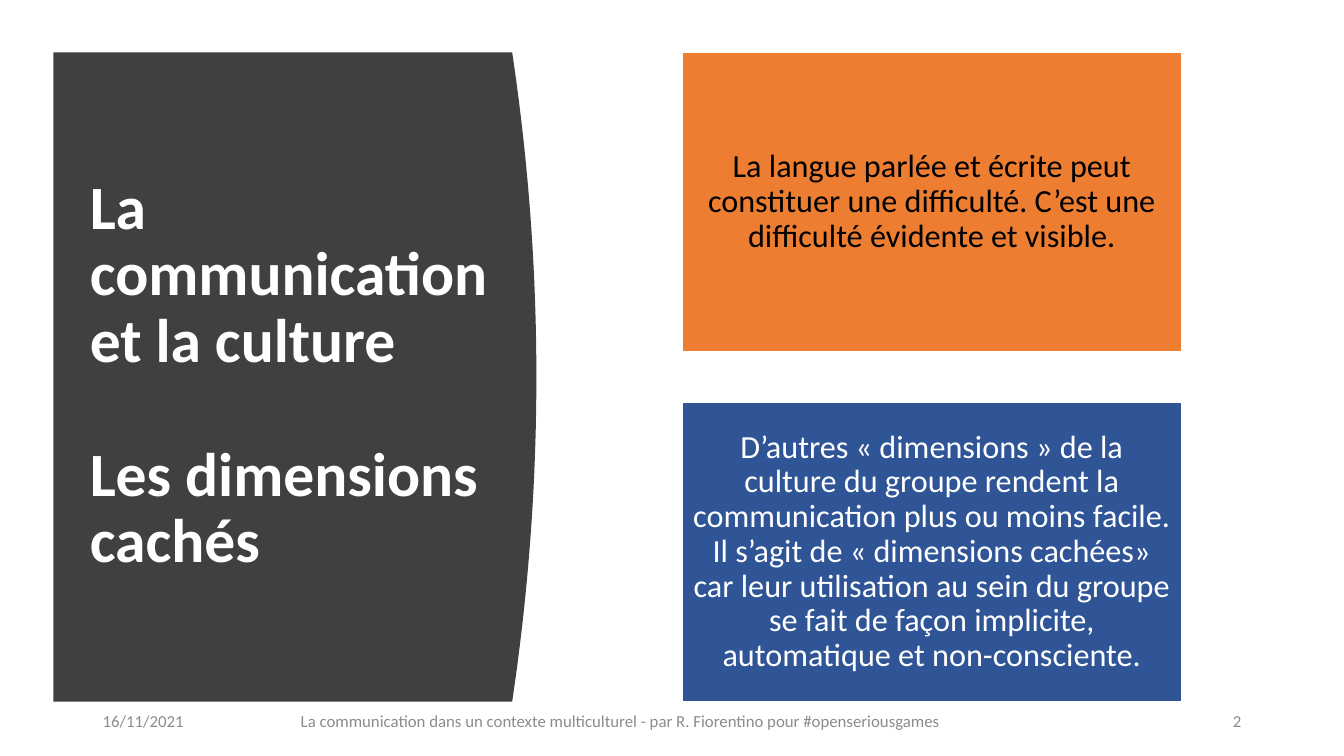
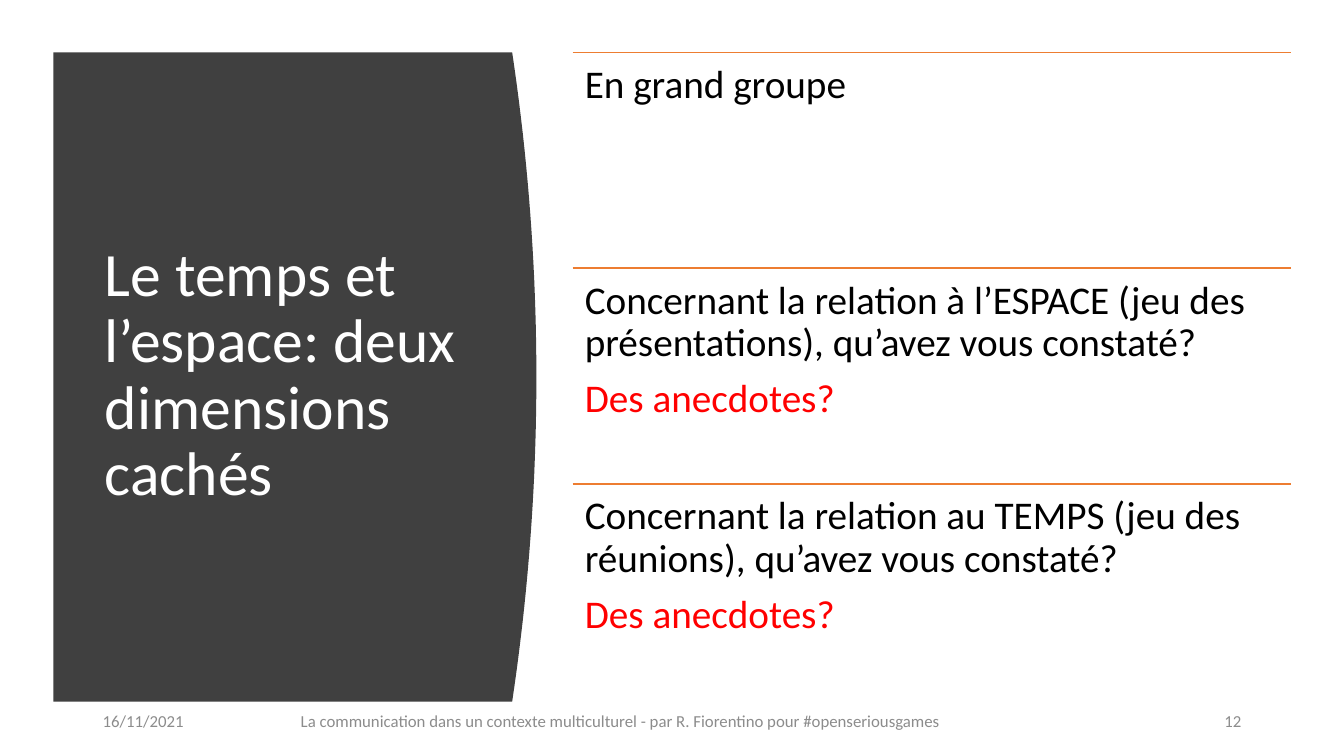
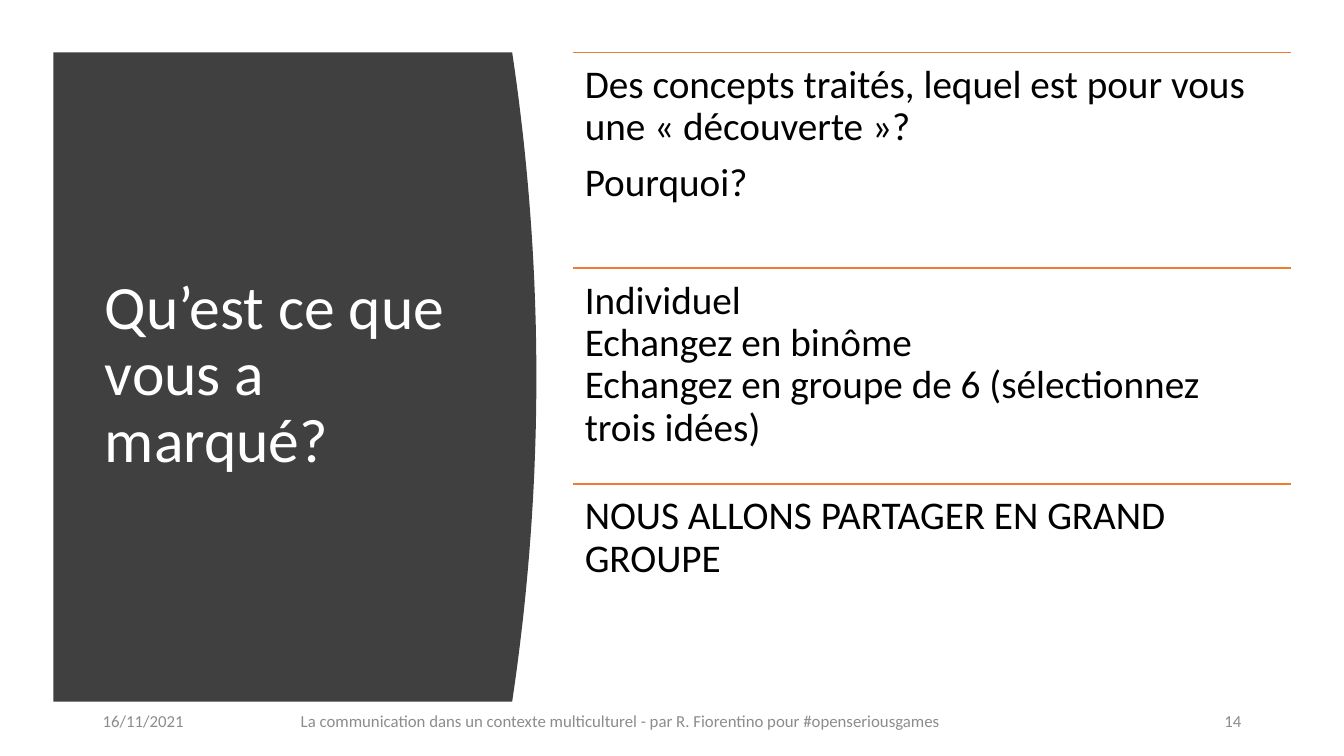
import pptx
import pptx.dml.color
import pptx.enum.shapes
import pptx.enum.text
import pptx.oxml.ns
import pptx.util
from lxml import etree
from pptx.util import Inches

FONT = "Calibri"
DARK, ORANGE, BLUE = "404040", "ED7D31", "2F5597"
WHITE, BLACK, RED, GREY = "FFFFFF", "000000", "FF0000", "8C8C8C"
DATE = "16/11/2021"
CREDIT = "La communication dans un contexte multiculturel - par R. Fiorentino pour #openseriousgames"
TOP, HEIGHT = 0.52, 6.44
PANEL = (0.53, TOP, 4.79, HEIGHT)
CARDS = (6.77, TOP, 4.95, HEIGHT)
ROWS = (5.68, TOP, 7.12, 6.42)
LEFT = pptx.enum.text.PP_ALIGN.LEFT
CENTER = pptx.enum.text.PP_ALIGN.CENTER
RIGHT = pptx.enum.text.PP_ALIGN.RIGHT
ANCHOR_TOP = pptx.enum.text.MSO_ANCHOR.TOP
ANCHOR_MIDDLE = pptx.enum.text.MSO_ANCHOR.MIDDLE


def color(value):
    return pptx.dml.color.RGBColor.from_string(value)


def paint(shape, fill, line=None):
    shape.shadow.inherit = False
    shape.fill.solid()
    shape.fill.fore_color.rgb = color(fill)
    if line:
        shape.line.color.rgb = color(line)
        shape.line.width = pptx.util.Pt(1)
    else:
        shape.line.fill.background()


def write(shape, paragraphs, size, align=LEFT, anchor=ANCHOR_MIDDLE, margins=(0.1, 0.05),
          spacing=0.9, before=0, after=0, bold=False):
    frame = shape.text_frame
    frame.word_wrap = True
    frame.auto_size = pptx.enum.text.MSO_AUTO_SIZE.NONE
    frame.vertical_anchor = anchor
    frame.margin_left = frame.margin_right = Inches(margins[0])
    frame.margin_top = frame.margin_bottom = Inches(margins[1])
    for index, (text, text_color) in enumerate(paragraphs):
        paragraph = frame.add_paragraph() if index else frame.paragraphs[0]
        paragraph.alignment = align
        paragraph.line_spacing = spacing
        paragraph.space_before = pptx.util.Pt(before if index else 0)
        paragraph.space_after = pptx.util.Pt(after)
        for number, line in enumerate(text.split("\n")):
            if number:
                paragraph.add_line_break()
            run = paragraph.add_run()
            run.text = line
            run.font.name = FONT
            run.font.size = pptx.util.Pt(size)
            run.font.bold = bold
            run.font.color.rgb = color(text_color)


def add_text(slide, box, paragraphs, size, **style):
    shape = slide.shapes.add_textbox(*map(Inches, box))
    write(shape, paragraphs, size, **style)


def add_panel(slide, box):
    left, top, width, height = box
    bulge, steps = 0.24, 40
    edge = left + width - bulge
    curve = [(edge + bulge * 4 * t * (1 - t), top + height * t)
             for t in (step / steps for step in range(steps + 1))]
    builder = slide.shapes.build_freeform(Inches(left), Inches(top))
    points = curve + [(left, top + height)]
    builder.add_line_segments([(Inches(x), Inches(y)) for x, y in points], close=True)
    paint(builder.convert_to_shape(), DARK)


def add_title(slide, box, lines, bold):
    title = slide.shapes.title
    title.left, title.top, title.width, title.height = map(Inches, box)
    write(title, [(line, WHITE) for line in lines], 44, before=48, bold=bold)
    title.element.getparent().append(title.element)


def add_footer(slide, number):
    for left, width, text, align in (
        (2.18, 7.95, CREDIT, CENTER),
        (10.27, 2.14, str(number), RIGHT),
        (0.92, 1.04, DATE, LEFT),
    ):
        add_text(slide, (left, 6.95, width, 0.4), [(text, GREY)], 12, align=align, spacing=1)


def add_base(presentation, number, lines, left=0.94, width=3.74, bold=False):
    slide = presentation.slides.add_slide(presentation.slide_layouts[5])
    add_panel(slide, PANEL)
    add_title(slide, (left, 1.11, width, 5.24), lines, bold)
    add_footer(slide, number)
    return slide


def add_cards(slide, box, cards):
    left, top, width, height = box
    card_height = 2.97
    step = (height - card_height) / (len(cards) - 1)
    for index, (text, fill, text_color) in enumerate(cards):
        card = slide.shapes.add_shape(
            pptx.enum.shapes.MSO_SHAPE.RECTANGLE,
            *map(Inches, (left, top + index * step, width, card_height)))
        paint(card, fill, WHITE)
        write(card, [(text, text_color)], 23, align=CENTER, margins=(0.1, 0.1), after=8)


def add_rule(slide, left, top, width):
    rule = slide.shapes.add_connector(
        pptx.enum.shapes.MSO_CONNECTOR.STRAIGHT,
        *map(Inches, (left, top, left + width, top)))
    rule.line.color.rgb = color(ORANGE)
    rule.line.width = pptx.util.Pt(1)
    etree.SubElement(rule.element.spPr, pptx.oxml.ns.qn("a:effectLst"))


def add_rows(slide, box, rows):
    left, top, width, height = box
    row_height = height / len(rows)
    for index, paragraphs in enumerate(rows):
        row_top = top + index * row_height
        add_rule(slide, left, row_top, width)
        add_text(slide, (left, row_top, width, row_height), paragraphs, 28,
                 anchor=ANCHOR_TOP, margins=(0.12, 0.12), after=9.8)


def main():
    presentation = pptx.Presentation()
    presentation.slide_width = Inches(13.33)
    presentation.slide_height = Inches(7.5)

    slide = add_base(presentation, 2,
                     ["La communication et la culture", "Les dimensions cachés"],
                     left=0.79, width=4.22, bold=True)
    add_cards(slide, CARDS, [
        ("La langue parlée et écrite peut constituer une difficulté. "
         "C’est une difficulté évidente et visible.", ORANGE, BLACK),
        ("D’autres « dimensions » de la culture du groupe rendent la communication "
         "plus ou moins facile. Il s’agit de « dimensions cachées» car leur utilisation "
         "au sein du groupe se fait de façon implicite, automatique et non-consciente.",
         BLUE, WHITE),
    ])

    anecdotes = ("Des anecdotes?", RED)
    slide = add_base(presentation, 12, ["Le temps et l’espace: deux dimensions cachés"])
    add_rows(slide, ROWS, [
        [("En grand groupe", BLACK)],
        [("Concernant la relation à l’ESPACE (jeu des présentations), "
          "qu’avez vous constaté?", BLACK), anecdotes],
        [("Concernant la relation au TEMPS (jeu des réunions), "
          "qu’avez vous constaté?", BLACK), anecdotes],
    ])

    slide = add_base(presentation, 14, ["Qu’est ce que vous a marqué?"])
    add_rows(slide, ROWS, [
        [("Des concepts traités, lequel est pour vous une « découverte »?", BLACK),
         ("Pourquoi?", BLACK)],
        [("Individuel\nEchangez en binôme\n"
          "Echangez en groupe de 6 (sélectionnez trois idées)", BLACK)],
        [("NOUS ALLONS PARTAGER EN GRAND GROUPE", BLACK)],
    ])

    presentation.save("out.pptx")


if __name__ == "__main__":
    main()
